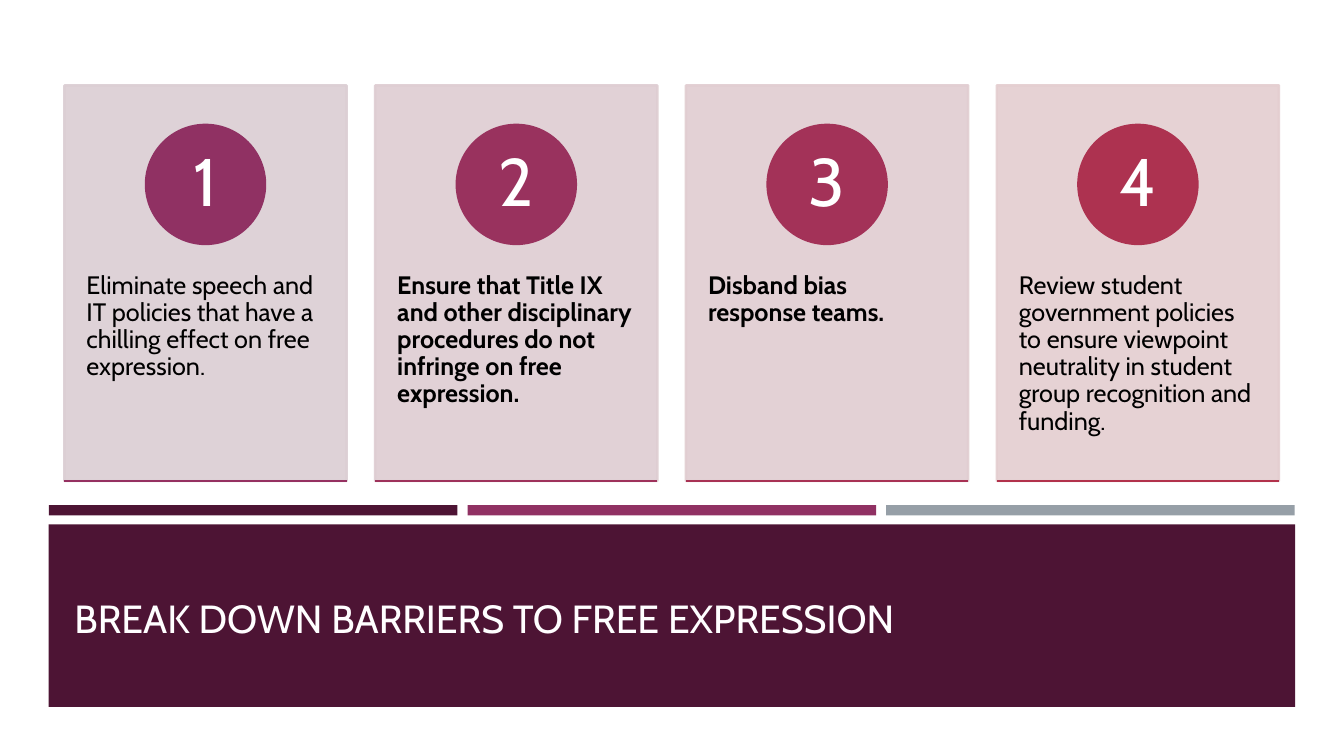
from lxml import etree
from pptx import Presentation
from pptx.dml.color import RGBColor
from pptx.enum.shapes import MSO_CONNECTOR, MSO_SHAPE
from pptx.enum.text import MSO_ANCHOR, MSO_AUTO_SIZE, PP_ALIGN
from pptx.oxml.ns import qn
from pptx.util import Pt

RECTANGLE, OVAL = MSO_SHAPE.RECTANGLE, MSO_SHAPE.OVAL
STRAIGHT = MSO_CONNECTOR.STRAIGHT
TOP, MIDDLE, BOTTOM = MSO_ANCHOR.TOP, MSO_ANCHOR.MIDDLE, MSO_ANCHOR.BOTTOM
LEFT, CENTER = PP_ALIGN.LEFT, PP_ALIGN.CENTER
NO_AUTOFIT = MSO_AUTO_SIZE.NONE

PLUM = "4D1434"
CARD_LEFT, CARD_TOP, CARD_WIDTH, CARD_HEIGHT = 46, 61, 201.6, 282.6
CARD_PITCH = 222
CIRCLE_SIZE = 85
LINE_WIDTH = 1.75

# Caption, bold, card colour, circle colour, base line colour
CARDS = [
    ("Eliminate speech and IT policies that have a chilling effect on free expression.",
     False, "DBCED3", "903163", "953161"),
    ("Ensure that Title IX and other disciplinary procedures do not infringe on free expression.",
     True, "DECDD2", "99325E", "9E325B"),
    ("Disband bias response teams.",
     True, "E1CDD1", "A33258", "A83254"),
    ("Review student government policies to ensure viewpoint neutrality in student group "
     "recognition and funding.",
     False, "E4CED0", "AD3250", "B2324B"),
]


def add_filled(kind, left, top, width, height, color, outlined=False):
    shape = slide.shapes.add_shape(kind, Pt(left), Pt(top), Pt(width), Pt(height))
    shape.shadow.inherit = False
    shape.fill.solid()
    shape.fill.fore_color.rgb = RGBColor.from_string(color)
    if outlined:
        shape.line.color.rgb = RGBColor.from_string(color)
        shape.line.width = Pt(LINE_WIDTH)
    else:
        shape.line.fill.background()
    return shape


def write(shape, text, size, color, align, anchor, inset_x, inset_y, spacing=1.0, bold=False):
    text_frame = shape.text_frame
    text_frame.text = text
    text_frame.word_wrap = True
    text_frame.auto_size = NO_AUTOFIT
    text_frame.vertical_anchor = anchor
    text_frame.margin_left = text_frame.margin_right = Pt(inset_x)
    text_frame.margin_top = text_frame.margin_bottom = Pt(inset_y)
    paragraph = text_frame.paragraphs[0]
    paragraph.alignment = align
    paragraph.line_spacing = spacing
    font = paragraph.runs[0].font
    font.name = "Cabin"
    font.size = Pt(size)
    font.bold = bold
    font.color.rgb = RGBColor.from_string(color)


presentation = Presentation()
presentation.slide_width, presentation.slide_height = Pt(960), Pt(540)
slide = presentation.slides.add_slide(presentation.slide_layouts[5])

# Three accent bars
for index, color in enumerate([PLUM, "903163", "969FA7"]):
    add_filled(RECTANGLE, 35 + 299 * index, 360.8, 291.8, 7.4, color)

# Title band, with the title in front of it
band = add_filled(RECTANGLE, 34.8, 374.5, 890.4, 130.5, PLUM)
title = slide.shapes.title
title.left, title.top, title.width, title.height = Pt(46), Pt(381.6), Pt(868.3), Pt(80)
write(title, "BREAK DOWN BARRIERS TO FREE EXPRESSION", 28, "FFFEFF", LEFT, BOTTOM, 7.2, 3.6)
band.element.addnext(title.element)

# Numbered cards
for index, (caption, bold, card_color, circle_color, base_color) in enumerate(CARDS):
    left = CARD_LEFT + CARD_PITCH * index

    card = add_filled(RECTANGLE, left, CARD_TOP, CARD_WIDTH, CARD_HEIGHT, card_color, True)
    for color_element in card.element.spPr.iter(qn("a:srgbClr")):
        etree.SubElement(color_element, qn("a:alpha")).set("val", "90000")

    caption_box = slide.shapes.add_textbox(Pt(left), Pt(168.5), Pt(CARD_WIDTH), Pt(170))
    write(caption_box, caption, 18, "000000", LEFT, TOP, 15.8, 26, 0.9, bold)

    circle = add_filled(OVAL, left + (CARD_WIDTH - CIRCLE_SIZE) / 2, 89.2,
                        CIRCLE_SIZE, CIRCLE_SIZE, circle_color, True)
    write(circle, str(index + 1), 48, "FFFFFF", CENTER, MIDDLE, 0, 0, 0.9)

    base = CARD_TOP + CARD_HEIGHT
    base_line = slide.shapes.add_connector(
        STRAIGHT, Pt(left), Pt(base), Pt(left + CARD_WIDTH), Pt(base))
    base_line.line.color.rgb = RGBColor.from_string(base_color)
    base_line.line.width = Pt(LINE_WIDTH)
    etree.SubElement(base_line.element.spPr, qn("a:effectLst"))

presentation.save("out.pptx")
